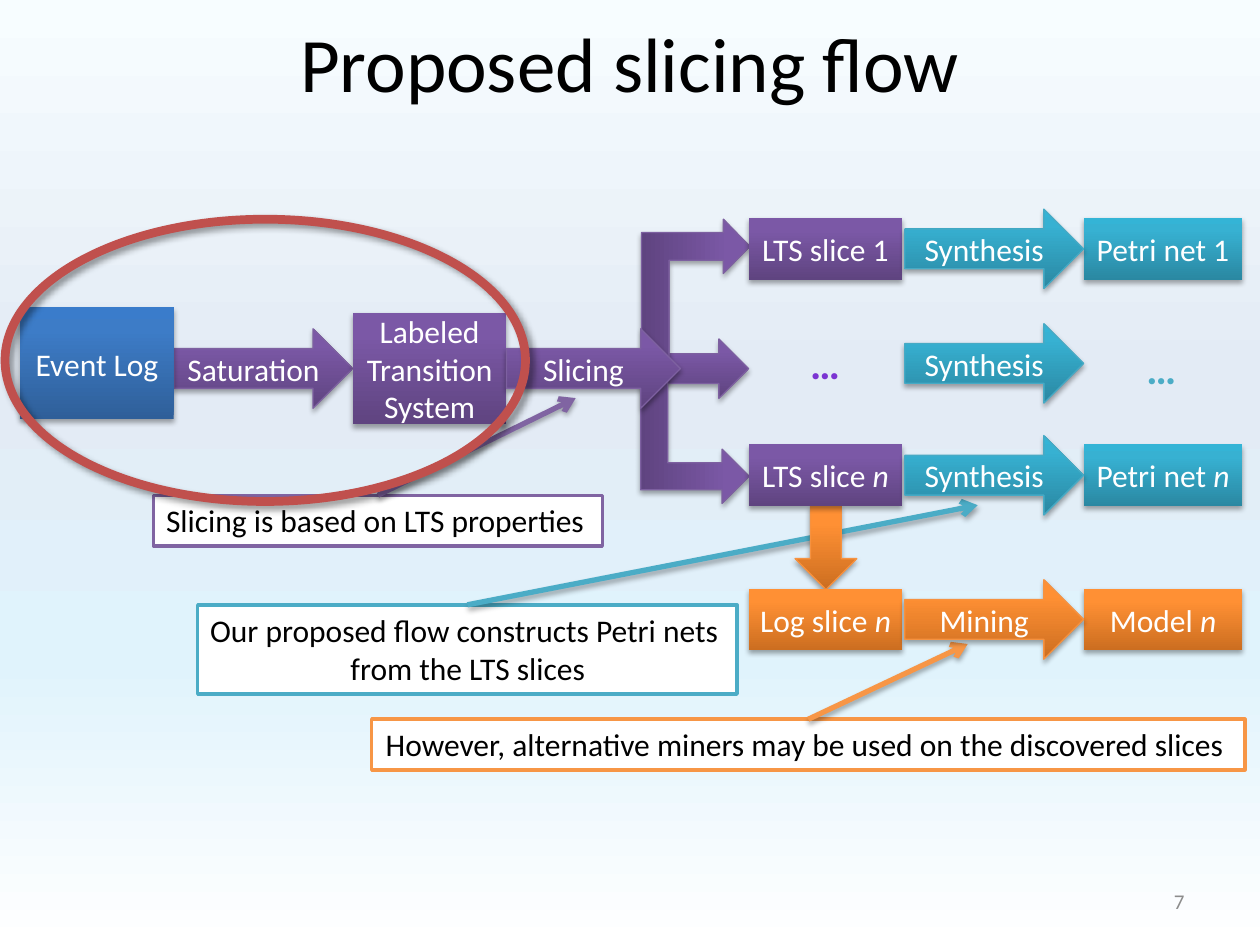
from lxml.etree import SubElement
from pptx import Presentation
from pptx.dml.color import RGBColor
from pptx.enum.shapes import MSO_CONNECTOR as Connector, MSO_SHAPE as Shape
from pptx.enum.text import MSO_ANCHOR as Anchor, MSO_AUTO_SIZE as AutoSize, PP_ALIGN as Align
from pptx.oxml.ns import qn
from pptx.util import Pt

PURPLE = [(0, "5F4480"), (80, "7B58A6"), (100, "7C57A8")]
BLUE = [(0, "2F5F99"), (80, "3D7CC7"), (100, "3A7CCB")]
TEAL = [(0, "2A88A2"), (80, "37B1D2"), (100, "34B4D6")]
ORANGE = [(0, "CC6E20"), (80, "FF9034"), (100, "FF9136")]
BACKGROUND = [(0, "F7FDFF"), (40, "E3EBF5"), (70, "E0F3FC"), (100, "FFFFFF")]
VIOLET_TEXT = [(0, "3D1B67"), (43, "7B34D2"), (48, "7330C4"), (100, "3D1B67")]
PURPLE_EDGE, TEAL_EDGE, ORANGE_EDGE = "7D60A0", "46AAC5", "F69240"
PURPLE_ACCENT, TEAL_ACCENT, ORANGE_ACCENT = "8064A2", "4BACC6", "F79646"

BOX_HEIGHT, ARROW_WIDTH, ARROW_HEIGHT = 35.2, 102.2, 45.4
SLICE_LEFT, STEP_LEFT, RESULT_LEFT = 427.8, 517, 619.2
SLICE_WIDTH, RESULT_WIDTH = 87.8, 90.8


def color(value):
    return RGBColor.from_string(value)


def paint(fill, parent, value, angle=90):
    if not isinstance(value, list):
        fill.solid()
        fill.fore_color.rgb = color(value)
        return
    fill.gradient()
    fill.gradient_angle = angle
    stops = parent.find(".//" + qn("a:gsLst"))
    for stop in list(stops):
        stops.remove(stop)
    for position, tone in value:
        stop = SubElement(stops, qn("a:gs"), pos=str(position * 1000))
        SubElement(stop, qn("a:srgbClr"), val=tone)


def cast_shadow(element, alpha=35, blur=3.1, distance=1.8, direction=90):
    properties = element.spPr
    effects = properties.find(qn("a:effectLst"))
    if effects is None:
        effects = SubElement(properties, qn("a:effectLst"))
    shadow = SubElement(
        effects, qn("a:outerShdw"), blurRad=str(Pt(blur)), dist=str(Pt(distance)),
        dir=str(direction * 60000), rotWithShape="0")
    tone = SubElement(shadow, qn("a:srgbClr"), val="000000")
    SubElement(tone, qn("a:alpha"), val=str(alpha * 1000))


class SlideBuilder:
    font = "Calibri"
    size = 18

    def __init__(self, slide):
        self.slide = slide
        paint(slide.background.fill, slide._element, BACKGROUND, 270)

    def add_text(self, shape, paragraphs, tone="FFFFFF", size=None,
                 alignments=(Align.CENTER,), bold=None):
        frame = shape.text_frame
        for index, (runs, alignment) in enumerate(zip(paragraphs, alignments)):
            paragraph = frame.paragraphs[0] if index == 0 else frame.add_paragraph()
            paragraph.alignment = alignment
            for text in runs:
                run = paragraph.add_run()
                run.text = text
                run.font.name = self.font
                run.font.size = Pt(size or self.size)
                run.font.bold = bold
                run.font.italic = True if text == "n" else None
                paint(run.font.fill, run._r, tone, 270)

    def title(self, text, left, top, width, height):
        title = self.slide.shapes.title
        title.left, title.top, title.width, title.height = map(Pt, (left, top, width, height))
        title.text_frame.vertical_anchor = Anchor.MIDDLE
        self.add_text(title, [[text]], "000000", 44)

    def block(self, kind, left, top, width, height, fill, edge=None, runs=(), margin=7.2):
        shape = self.slide.shapes.add_shape(kind, *map(Pt, (left, top, width, height)))
        shape.shadow.inherit = False
        paint(shape.fill, shape._element, fill)
        if edge:
            shape.line.color.rgb = color(edge)
            shape.line.width = Pt(0.75)
        else:
            shape.line.fill.background()
        cast_shadow(shape._element)
        frame = shape.text_frame
        frame.word_wrap = True
        frame.vertical_anchor = Anchor.MIDDLE
        frame.margin_left = frame.margin_right = Pt(margin)
        if runs:
            self.add_text(shape, [runs])
        return shape

    def arrow(self, left, top, fill, edge, text, width=ARROW_WIDTH):
        return self.block(Shape.RIGHT_ARROW, left, top, width, ARROW_HEIGHT, fill, edge, [text])

    def bent_arrow(self, left, top, width, rotation, adjustments, flipped=False):
        shape = self.block(Shape.BENT_UP_ARROW, left, top, width, 62, PURPLE, PURPLE_EDGE)
        shape.rotation = rotation
        for index, value in enumerate(adjustments):
            shape.adjustments[index] = value
        if flipped:
            shape._element.spPr.xfrm.set("flipV", "1")

    def callout(self, left, top, width, height, edge, paragraphs, alignments, target):
        shape = self.slide.shapes.add_shape(
            Shape.RECTANGLE, *map(Pt, (left, top, width, height)))
        shape.shadow.inherit = False
        paint(shape.fill, shape._element, "FFFFFF")
        shape.line.color.rgb = color(edge)
        shape.line.width = Pt(2)
        frame = shape.text_frame
        frame.word_wrap = False
        frame.auto_size = AutoSize.SHAPE_TO_FIT_TEXT
        frame.vertical_anchor = Anchor.TOP
        self.add_text(shape, paragraphs, "000000", alignments=alignments)
        self.pointer(shape, target, edge)

    def pointer(self, origin, target, tone):
        connector = self.slide.shapes.add_connector(
            Connector.STRAIGHT, origin.left, origin.top, *map(Pt, target))
        connector.begin_connect(origin, 0)
        connector.line.color.rgb = color(tone)
        connector.line.width = Pt(3)
        SubElement(connector.line._get_or_add_ln(), qn("a:tailEnd"), type="arrow")
        cast_shadow(connector._element)

    def label(self, text, left, top, width, height, tone, size, alignment, wrap=True, bold=None):
        box = self.slide.shapes.add_textbox(*map(Pt, (left, top, width, height)))
        box.text_frame.word_wrap = wrap
        self.add_text(box, [[text]], tone, size, [alignment], bold)
        return box

    def ellipsis(self, left, top, tone, outline):
        box = self.label("…", left, top, 31.7, 36, tone, 24, Align.LEFT, False, True)
        box.text_frame.auto_size = AutoSize.SHAPE_TO_FIT_TEXT
        properties = box.text_frame.paragraphs[0].runs[0]._r.get_or_add_rPr()
        line = SubElement(properties, qn("a:ln"), w=str(Pt(0.71)))
        SubElement(SubElement(line, qn("a:solidFill")), qn("a:srgbClr"), val=outline)
        properties.insert(0, line)

    def highlight(self, left, top, width, height, tone):
        shape = self.slide.shapes.add_shape(Shape.OVAL, *map(Pt, (left, top, width, height)))
        shape.shadow.inherit = False
        shape.fill.background()
        shape.line.color.rgb = color(tone)
        shape.line.width = Pt(5)
        cast_shadow(shape._element, 40, 4, 3, 45)


def main():
    presentation = Presentation()
    presentation.slide_width, presentation.slide_height = Pt(720), Pt(540)
    builder = SlideBuilder(presentation.slides.add_slide(presentation.slide_layouts[5]))
    builder.title("Proposed slicing flow", 36, 4.3, 648, 62)

    builder.callout(87.8, 283, 256.4, 29, PURPLE_ACCENT,
                    [["Slicing is based on LTS properties"]], [Align.LEFT], (329, 227.5))
    builder.callout(212.4, 411, 499, 29, ORANGE_ACCENT,
                    [["However, alternative miners may be used on the discovered slices "]],
                    [Align.CENTER], (553, 368))
    builder.callout(113, 345.6, 308.2, 51, TEAL_ACCENT,
                    [["Our proposed flow constructs Petri nets"], [" from the LTS slices"]],
                    [Align.LEFT, Align.CENTER], (558.7, 288.7))

    builder.arrow(99.4, 187.9, PURPLE, PURPLE_EDGE, "Saturation")
    for left, top, fill, text in ((11.5, 175.7, BLUE, "Event Log"),
                                  (201.6, 178.6, PURPLE, "Labeled Transition System")):
        builder.block(Shape.RECTANGLE, left, top, SLICE_WIDTH, 64, fill, runs=[text])
    builder.block(Shape.RIGHT_ARROW, 365.8, 193.7, 62, 34, PURPLE, PURPLE_EDGE)
    builder.bent_arrow(358.6, 218.2, 77, 90, (0.25, 0.25, 0.25))
    builder.bent_arrow(355, 136.8, 85, 270, (0.255, 0.25, 0.245), True)
    builder.arrow(289.4, 187.9, PURPLE, PURPLE_EDGE, "Slicing", 99.4)

    builder.block(Shape.DOWN_ARROW, 454.3, 289.4, 35.3, 47.5, ORANGE, ORANGE_EDGE)
    rows = (
        (124.6, PURPLE, ["LTS slice 1"], TEAL, TEAL_EDGE, "Synthesis", ["Petri net 1"], 7.2),
        (254, PURPLE, ["LTS slice ", "n"], TEAL, TEAL_EDGE, "Synthesis", ["Petri net ", "n"], 7.2),
        (336.4, ORANGE, ["Log slice ", "n"], ORANGE, ORANGE_EDGE, "Mining", ["Model ", "n"], 5.8),
    )
    for top, slice_fill, slice_runs, fill, edge, step, result_runs, margin in rows:
        builder.block(Shape.RECTANGLE, SLICE_LEFT, top, SLICE_WIDTH, BOX_HEIGHT,
                      slice_fill, runs=slice_runs, margin=margin)
        builder.block(Shape.RECTANGLE, RESULT_LEFT, top, RESULT_WIDTH, BOX_HEIGHT,
                      fill, runs=result_runs)
        builder.arrow(STEP_LEFT, top - (ARROW_HEIGHT - BOX_HEIGHT) / 2, fill, edge, step)
    builder.arrow(STEP_LEFT, 185, TEAL, TEAL_EDGE, "Synthesis")
    builder.ellipsis(455.8, 189.4, VIOLET_TEXT, "5E457C")
    builder.ellipsis(648, 192.2, TEAL_ACCENT, "31859C")

    builder.highlight(2.9, 125.3, 297.4, 161.3, "C0504D")
    number = builder.label("7", 516, 500.5, 168, 28.8, "8C8C8C", 12, Align.RIGHT)
    number.text_frame.vertical_anchor = Anchor.MIDDLE
    presentation.save("out.pptx")


if __name__ == "__main__":
    main()
